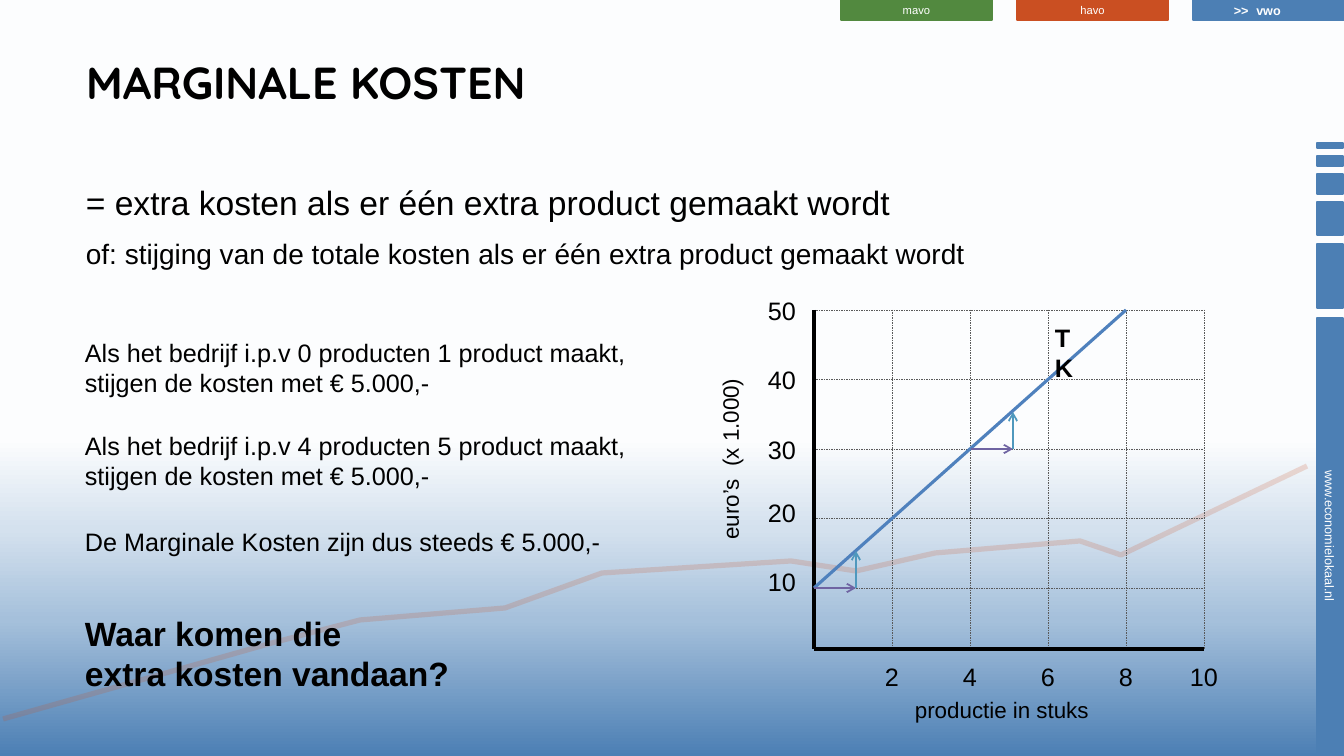
from lxml import etree
from pptx import Presentation
from pptx.dml.color import RGBColor
from pptx.enum.dml import MSO_LINE
from pptx.enum.shapes import MSO_CONNECTOR, MSO_SHAPE
from pptx.enum.text import MSO_ANCHOR, PP_ALIGN
from pptx.oxml.ns import qn
from pptx.util import Pt

PX = 914400 / 100.8
LEFT, CENTER = PP_ALIGN.LEFT, PP_ALIGN.CENTER
TOP, MIDDLE = MSO_ANCHOR.TOP, MSO_ANCHOR.MIDDLE
STRAIGHT, RECT, DASH = MSO_CONNECTOR.STRAIGHT, MSO_SHAPE.RECTANGLE, MSO_LINE.DASH
BLUE, ORANGE, GREEN = "4C7FB4", "CA4F22", "52893F"
BLACK, WHITE, GREY = "000000", "FFFFFF", "595959"
COST_BLUE, PURPLE, TEAL = "4F81BD", "6F64A2", "4F98BD"

TITLE = "MARGINALE KOSTEN"
DEFINITION = [("= extra kosten als er één extra product gemaakt wordt", 24),
              ("of: stijging van de totale kosten als er één extra product gemaakt wordt", 20)]
EXPLANATIONS = [
    (332, 72, 18, False, ["Als het bedrijf i.p.v 0 producten 1 product maakt,",
                          "stijgen de kosten met € 5.000,-"]),
    (425, 72, 18, False, ["Als het bedrijf i.p.v 4 producten 5 product maakt,",
                          "stijgen de kosten met € 5.000,-"]),
    (521, 40, 18, False, ["De Marginale Kosten zijn dus steeds € 5.000,-"]),
    (608, 92, 24, True, ["Waar komen die", "extra kosten vandaan?"]),
]
TABS = [("mavo", GREEN, 8, False), ("havo", ORANGE, 8, False), ("vwo", BLUE, 9, True)]
SIDE_BARS = [(143, 5, ""), (156, 10, ""), (174, 20, ""), (202, 33, ""),
             (244, 64, ""), (318, 436, "www.economielokaal.nl")]
TREND = [(1307, 466), (1121, 555), (1080, 541), (935, 553), (856, 571), (791, 561),
         (602, 573), (505, 608), (360, 620), (272, 643), (3, 719)]
BACKGROUND = [(0, BLUE), (18, "A5C0DB"), (30, "D4E1EE"), (42, "FCFDFE"), (50, WHITE)]
GRAPH_X, GRAPH_Y, GRAPH_W, GRAPH_H = 814, 310, 390, 339
X_LABELS = ["2", "4", "6", "8", "10"]
Y_LABELS = [("50", 290), ("40", 359), ("30", 429), ("20", 492), ("10", 561)]
X_STEP = GRAPH_W / len(X_LABELS)
ROWS = [GRAPH_Y, 379, 449, 518, 588]
STEPS = [(GRAPH_X, ROWS[4]), (971, ROWS[2])]
STEP_W, STEP_H = 42, 37


def px(*values):
    return [round(v * PX) for v in values]


def rgb(color):
    return RGBColor.from_string(color)


def write(tf, lines, size=18, color=BLACK, bold=False, font="Arial",
          align=LEFT, anchor=TOP, gap=0):
    tf.word_wrap = True
    tf.vertical_anchor = anchor
    for i, line in enumerate(lines):
        text, pt = line if isinstance(line, tuple) else (line, size)
        p = tf.paragraphs[0] if i == 0 else tf.add_paragraph()
        p.alignment = align
        p.space_before = Pt(gap if i else 0)
        r = p.add_run()
        r.text = text
        r.font.size, r.font.bold, r.font.name = Pt(pt), bold, font
        r.font.color.rgb = rgb(color)


def text_box(x, y, w, h, lines, rotation=0, **fmt):
    sp = slide.shapes.add_textbox(*px(x, y, w, h))
    sp.rotation = rotation
    write(sp.text_frame, lines, **fmt)


def block(x, y, w, h, color, text, rotation=0, **fmt):
    sp = slide.shapes.add_shape(RECT, *px(x, y, w, h))
    sp.shadow.inherit = False
    sp.rotation = rotation
    sp.fill.solid()
    sp.fill.fore_color.rgb = rgb(color)
    sp.line.color.rgb = rgb(color)
    sp.line.width = Pt(1.25)
    if text:
        tf = sp.text_frame
        tf.margin_top = tf.margin_bottom = 0
        write(tf, [text], color=WHITE, align=CENTER, anchor=MIDDLE, **fmt)


def line(x1, y1, x2, y2, color, width, dash=None, arrow=False):
    c = slide.shapes.add_connector(STRAIGHT, *px(x1, y1, x2, y2))
    c.line.color.rgb = rgb(color)
    c.line.width = Pt(width)
    if dash:
        c.line.dash_style = dash
    if arrow:
        etree.SubElement(c.line._get_or_add_ln(), qn("a:tailEnd"), type="arrow")
    etree.SubElement(c._element.spPr, qn("a:effectLst"))


def paint_background():
    fill = slide.background.fill
    fill.gradient()
    fill.gradient_angle = 90
    stops = slide._element.find(".//" + qn("a:gsLst"))
    for stop in list(stops):
        stops.remove(stop)
    for percent, color in BACKGROUND:
        stop = etree.SubElement(stops, qn("a:gs"), pos=str(percent * 1000))
        etree.SubElement(stop, qn("a:srgbClr"), val=color)


def draw_trend():
    builder = slide.shapes.build_freeform(*TREND[0], scale=PX)
    builder.add_line_segments(TREND[1:], close=False)
    sp = builder.convert_to_shape()
    sp.shadow.inherit = False
    sp.fill.background()
    sp.line.color.rgb = rgb(ORANGE)
    sp.line.width = Pt(3.75)
    color = sp.line._get_or_add_ln().find(".//" + qn("a:srgbClr"))
    etree.SubElement(color, qn("a:alpha"), val="19000")


def draw_frame():
    for y, length, text in SIDE_BARS:
        block(1330 - length / 2, y + length / 2 - 13, length, 26, BLUE, text,
              rotation=90, size=9)
    for i, (text, color, size, bold) in enumerate(TABS):
        block(841 + 176 * i, 0, 151, 20, color, text, size=size, bold=bold)
    draw_trend()
    text_box(1224, -2, 40, 25, [">>"], size=9, color=WHITE, bold=True)


def draw_graph():
    right, bottom = GRAPH_X + GRAPH_W, GRAPH_Y + GRAPH_H
    for y in ROWS:
        line(GRAPH_X, y, right, y, GREY, 0.25, dash=DASH)
    for i, label in enumerate(X_LABELS, 1):
        x = GRAPH_X + X_STEP * i
        line(x, GRAPH_Y, x, bottom, GREY, 0.25, dash=DASH)
        text_box(x - 30, 656, 60, 40, [label], align=CENTER)
    for label, y in Y_LABELS:
        text_box(758, y, 56, 40, [label])
    text_box(905, 691, 210, 37, ["productie in stuks"], size=16)
    text_box(635, 436, 190, 37, ["euro’s  (x 1.000)"], size=16, rotation=270)
    line(GRAPH_X, GRAPH_Y, GRAPH_X, bottom, BLACK, 3)
    line(right, bottom, GRAPH_X, bottom, BLACK, 3)
    line(GRAPH_X, ROWS[4], GRAPH_X + 4 * X_STEP, GRAPH_Y, COST_BLUE, 2.25)
    text_box(1045, 317, 46, 40, ["TK"], bold=True)
    for x, y in STEPS:
        corner = x + STEP_W
        line(x, y, corner, y, PURPLE, 1.25, arrow=True)
        line(corner, y, corner, y - STEP_H, TEAL, 1.25, arrow=True)


prs = Presentation()
prs.slide_width, prs.slide_height = px(1344, 756)
slide = prs.slides.add_slide(prs.slide_layouts[5])
paint_background()
draw_frame()
title = slide.shapes.title
title.left, title.top, title.width, title.height = px(76, 50, 1011, 90)
write(title.text_frame, [TITLE], size=32, bold=True, font="Quicksand")
text_box(76, 177, 1153, 100, DEFINITION, gap=10)
draw_graph()
for y, height, size, bold, lines in EXPLANATIONS:
    text_box(75, y, 572, height, lines, size=size, bold=bold)
prs.save("out.pptx")
